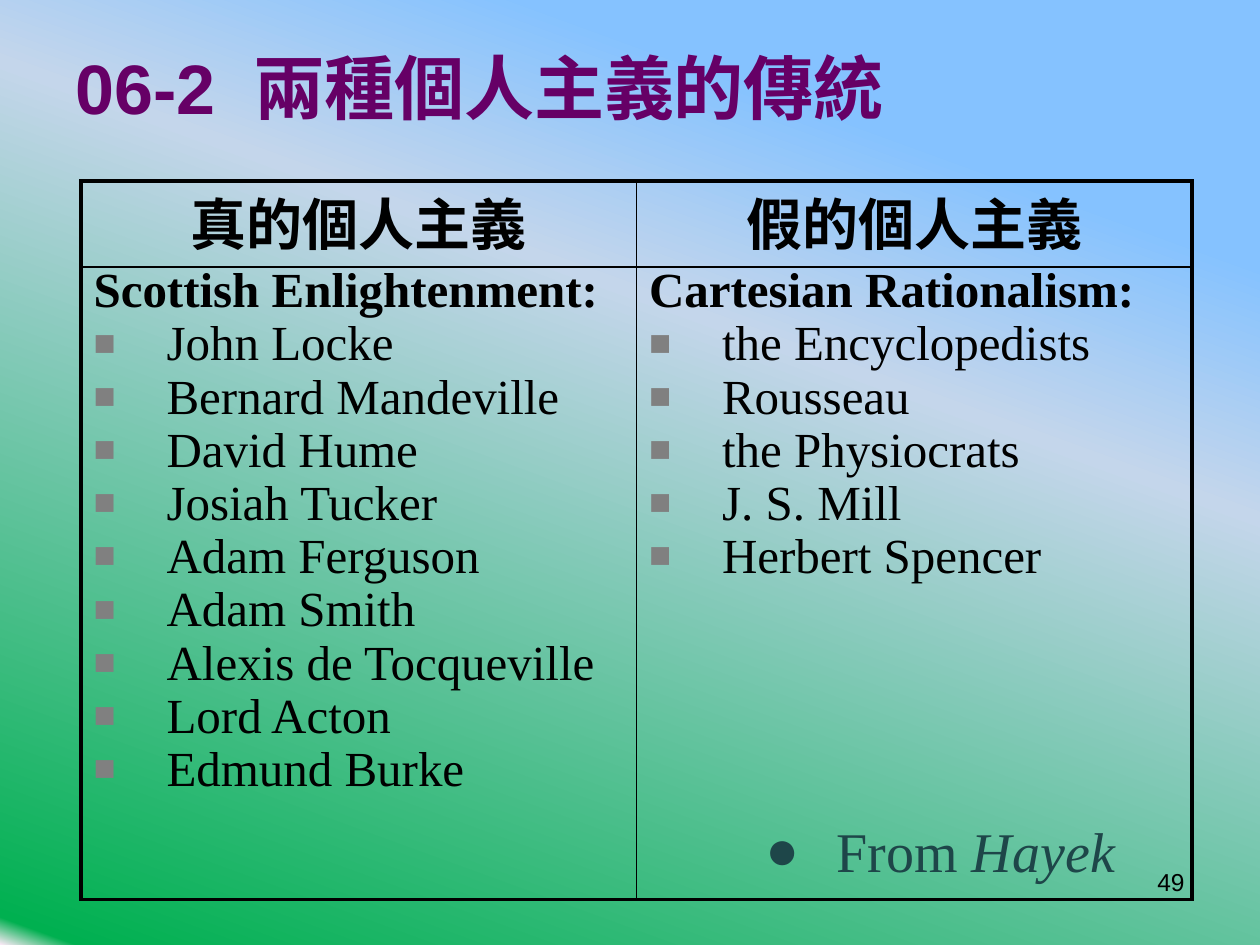
"""Build the slide that sets two traditions of individualism side by side."""
from dataclasses import dataclass

from lxml import etree
from pptx import Presentation
from pptx.dml.color import RGBColor
from pptx.enum.text import MSO_ANCHOR, PP_ALIGN
from pptx.oxml.ns import qn
from pptx.util import Emu, Pt

LEFT, CENTER, RIGHT = PP_ALIGN.LEFT, PP_ALIGN.CENTER, PP_ALIGN.RIGHT
MIDDLE = MSO_ANCHOR.MIDDLE
TITLE_ONLY = 5
EMU_PER_INCH, PX_PER_INCH = 914400, 126


@dataclass(frozen=True)
class Theme:
    title_color: str = "660066"
    text_color: str = "000000"
    source_color: str = "1E4649"
    bullet_color: str = "808080"
    gradient: tuple = ((19, "85C2FF"), (37, "C4D6EB"), (98, "00B050"), (100, "FFEBFA"))
    gradient_angle: int = 250
    sans: str = "Arial"
    serif: str = "Times New Roman"
    chinese: str = "Noto Sans CJK TC"
    title_size: int = 40
    heading_size: int = 32
    body_size: int = 28
    number_size: int = 14
    outer_line: float = 2.25
    inner_line: float = 1


@dataclass(frozen=True)
class TextStyle:
    font: str
    size: int
    color: str
    bold: bool = False
    italic: bool = False


@dataclass(frozen=True)
class Box:
    left: int
    top: int
    width: int
    height: int


@dataclass(frozen=True)
class Tradition:
    heading: str
    school: str
    thinkers: tuple[str, ...]


THEME = Theme()
TITLE_LATIN = TextStyle(THEME.sans, THEME.title_size, THEME.title_color, bold=True)
TITLE_CHINESE = TextStyle(THEME.chinese, THEME.title_size, THEME.title_color, bold=True)
HEADING = TextStyle(THEME.chinese, THEME.heading_size, THEME.text_color, bold=True)
SCHOOL = TextStyle(THEME.serif, THEME.body_size, THEME.text_color, bold=True)
THINKER = TextStyle(THEME.serif, THEME.body_size, THEME.text_color)
SOURCE = TextStyle(THEME.serif, THEME.heading_size, THEME.source_color)
SOURCE_NAME = TextStyle(THEME.serif, THEME.heading_size, THEME.source_color, italic=True)
NUMBER = TextStyle(THEME.sans, THEME.number_size, THEME.text_color)

TITLE_BOX = Box(63, 23, 1134, 127)
TABLE_BOX = Box(81, 181, 1111, 714)
SOURCE_BOX = Box(742, 804, 393, 82)
NUMBER_BOX = Box(903, 861, 294, 66)
HEADING_HEIGHT = 81

TRADITIONS = (
    Tradition("真的個人主義", "Scottish Enlightenment:", (
        "John Locke", "Bernard Mandeville", "David Hume", "Josiah Tucker", "Adam Ferguson",
        "Adam Smith", "Alexis de Tocqueville", "Lord Acton", "Edmund Burke")),
    Tradition("假的個人主義", "Cartesian Rationalism:", (
        "the Encyclopedists", "Rousseau", "the Physiocrats", "J. S. Mill", "Herbert Spencer")),
)


def px(length: int) -> Emu:
    return Emu(round(length * EMU_PER_INCH / PX_PER_INCH))


def frame(box: Box) -> tuple[Emu, ...]:
    return px(box.left), px(box.top), px(box.width), px(box.height)


def add_node(parent, tag: str, **attributes):
    return etree.SubElement(parent, qn(tag), attributes)


def add_run(paragraph, text: str, style: TextStyle) -> None:
    run = paragraph.add_run()
    run.text = text
    run.font.size = Pt(style.size)
    run.font.bold = style.bold
    run.font.italic = style.italic
    run.font.color.rgb = RGBColor.from_string(style.color)
    run.font.name = style.font
    add_node(run.font._element, "a:ea", typeface=style.font)


def set_spacing(paragraph, lines: float) -> None:
    paragraph.line_spacing = lines
    before = add_node(paragraph._p.get_or_add_pPr(), "a:spcBef")
    add_node(before, "a:spcPct", val="20000")


def set_indent(paragraph, margin: int, hanging: int) -> None:
    properties = paragraph._p.get_or_add_pPr()
    properties.set("marL", str(px(margin)))
    properties.set("indent", str(-px(hanging)))


def set_bullet(paragraph, symbol: str, color: str, percent: int) -> None:
    properties = paragraph._p.get_or_add_pPr()
    add_node(add_node(properties, "a:buClr"), "a:srgbClr", val=color)
    add_node(properties, "a:buSzPct", val=str(percent * 1000))
    add_node(properties, "a:buFont", typeface=THEME.sans)
    add_node(properties, "a:buChar", char=symbol)


def set_borders(cell, row: int, column: int) -> None:
    outer_sides = {"L": column == 0, "R": column == 1, "T": row == 0, "B": row == 1}
    properties = cell._tc.get_or_add_tcPr()
    for side, outer in outer_sides.items():
        width = Pt(THEME.outer_line if outer else THEME.inner_line)
        line = add_node(properties, f"a:ln{side}", w=str(width))
        add_node(add_node(line, "a:solidFill"), "a:srgbClr", val=THEME.text_color)
    cell.fill.background()


def fill_background(slide) -> None:
    fill = slide.background.fill
    fill.gradient()
    fill.gradient_angle = THEME.gradient_angle
    stops = next(slide.element.iter(qn("a:gsLst")))
    for stop in list(stops):
        stops.remove(stop)
    for position, color in THEME.gradient:
        stop = add_node(stops, "a:gs", pos=str(position * 1000))
        add_node(stop, "a:srgbClr", val=color)


def fill_title(slide) -> None:
    title = slide.shapes.title
    title.left, title.top, title.width, title.height = frame(TITLE_BOX)
    title.text_frame.vertical_anchor = MIDDLE
    paragraph = title.text_frame.paragraphs[0]
    paragraph.alignment = LEFT
    add_run(paragraph, "06-2  ", TITLE_LATIN)
    add_run(paragraph, "兩種個人主義的傳統", TITLE_CHINESE)


def fill_tradition(table, column: int, tradition: Tradition) -> None:
    heading_cell, body_cell = table.cell(0, column), table.cell(1, column)
    heading = heading_cell.text_frame.paragraphs[0]
    heading.alignment = CENTER
    set_spacing(heading, 0.9)
    add_run(heading, tradition.heading, HEADING)
    for index, text in enumerate((tradition.school, *tradition.thinkers)):
        body = body_cell.text_frame
        paragraph = body.add_paragraph() if index else body.paragraphs[0]
        set_spacing(paragraph, 0.8)
        set_indent(paragraph, 73, 73)
        if index:
            set_bullet(paragraph, "■", THEME.bullet_color, 75)
        add_run(paragraph, text, THINKER if index else SCHOOL)
    for row, cell in enumerate((heading_cell, body_cell)):
        set_borders(cell, row, column)


def add_traditions_table(slide) -> None:
    table = slide.shapes.add_table(2, len(TRADITIONS), *frame(TABLE_BOX)).table
    table.first_row = table.horz_banding = False
    table.rows[0].height = px(HEADING_HEIGHT)
    table.rows[1].height = px(TABLE_BOX.height - HEADING_HEIGHT)
    for column, tradition in enumerate(TRADITIONS):
        fill_tradition(table, column, tradition)


def add_text_box(slide, box: Box):
    text_frame = slide.shapes.add_textbox(*frame(box)).text_frame
    text_frame.word_wrap = True
    return text_frame.paragraphs[0]


def main() -> None:
    presentation = Presentation()
    presentation.slide_width, presentation.slide_height = px(1260), px(945)
    slide = presentation.slides.add_slide(presentation.slide_layouts[TITLE_ONLY])
    fill_background(slide)
    fill_title(slide)
    add_traditions_table(slide)
    source = add_text_box(slide, SOURCE_BOX)
    source.line_spacing = 1.1
    set_indent(source, 82, 71)
    set_bullet(source, "●", THEME.source_color, 100)
    add_run(source, "From ", SOURCE)
    add_run(source, "Hayek", SOURCE_NAME)
    number = add_text_box(slide, NUMBER_BOX)
    number.alignment = RIGHT
    add_run(number, "49", NUMBER)
    presentation.save("out.pptx")


if __name__ == "__main__":
    main()
